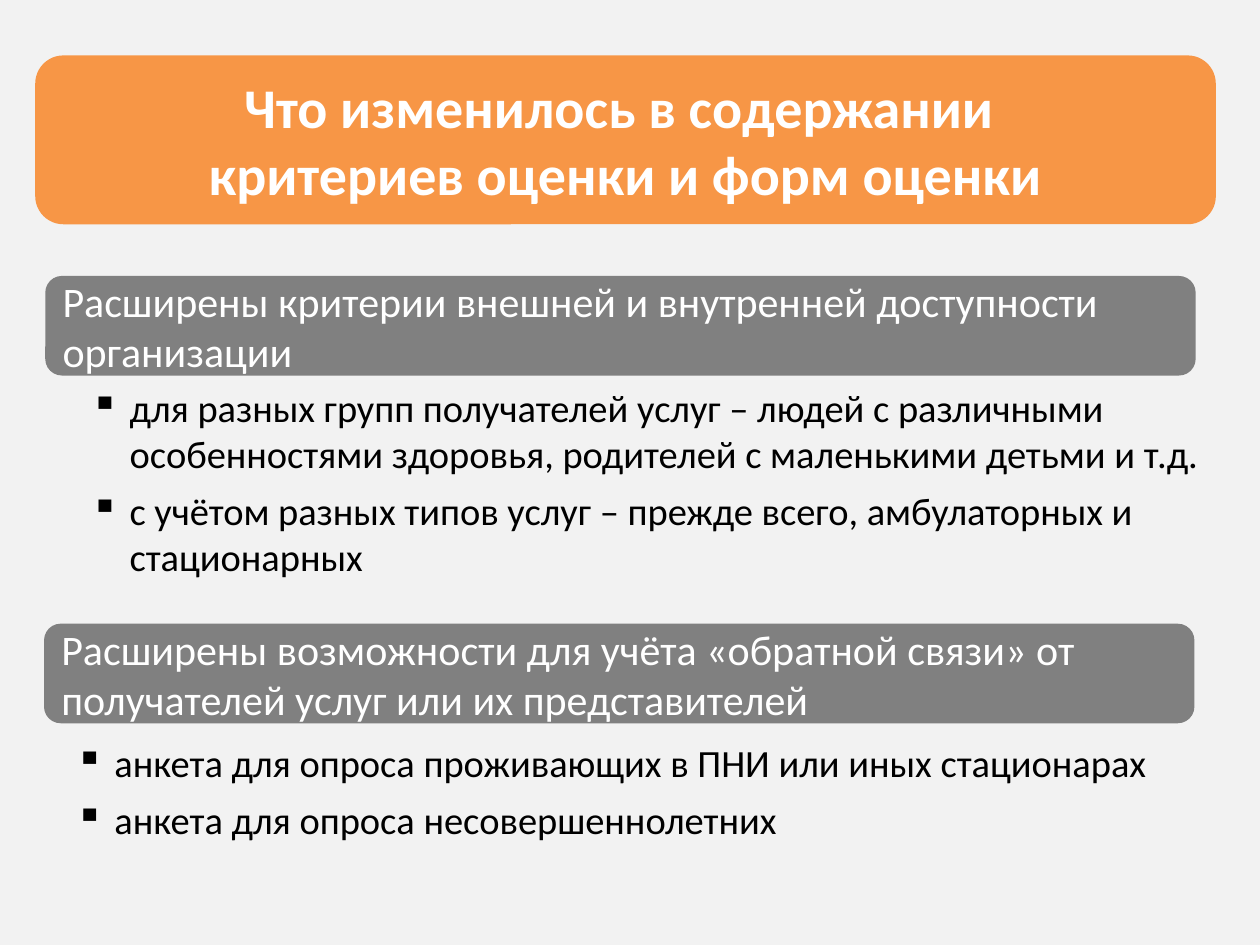
from pptx import Presentation
from pptx.dml.color import RGBColor
from pptx.enum.shapes import MSO_SHAPE
from pptx.enum.text import MSO_ANCHOR, MSO_AUTO_SIZE, PP_ALIGN
from pptx.oxml.ns import qn
from pptx.util import Inches, Pt
from lxml.etree import SubElement

PAPER = RGBColor(0xF2, 0xF2, 0xF2)
ORANGE = RGBColor(0xF7, 0x96, 0x46)
GRAY = RGBColor(0x80, 0x80, 0x80)
WHITE = RGBColor(0xFF, 0xFF, 0xFF)
BLACK = RGBColor(0, 0, 0)
WIDTH, HEIGHT = 10, 7.5
COLS, ROWS = 100, 75


class Deck:
    """Holds the style and the current slide; lengths are grid columns and rows."""

    def __init__(self, face="Calibri"):
        self.face = face
        self.show = Presentation()
        self.show.slide_width = Inches(WIDTH)
        self.show.slide_height = Inches(HEIGHT)
        self.slide = self.show.slides.add_slide(self.show.slide_layouts[6])
        fill = self.slide.background.fill
        fill.solid()
        fill.fore_color.rgb = PAPER

    def area(self, col, row, wide, high):
        x, y = WIDTH / COLS, HEIGHT / ROWS
        return Inches(col * x), Inches(row * y), Inches(wide * x), Inches(high * y)

    def style(self, para, size, color, bold=False):
        font = para.font
        font.name, font.size, font.bold = self.face, Pt(size), bold
        font.color.rgb = color

    def banner(self, area, text, fill, size, align=PP_ALIGN.LEFT, bold=False):
        shape = self.slide.shapes.add_shape(MSO_SHAPE.ROUNDED_RECTANGLE, *self.area(*area))
        shape.shadow.inherit = False
        shape.fill.solid()
        shape.fill.fore_color.rgb = fill
        shape.line.fill.background()
        frame = shape.text_frame
        frame.word_wrap = True
        frame.vertical_anchor = MSO_ANCHOR.MIDDLE
        para = frame.paragraphs[0]
        para.text = text
        para.alignment = align
        self.style(para, size, WHITE, bold)

    def bullets(self, area, items):
        frame = self.slide.shapes.add_textbox(*self.area(*area)).text_frame
        frame.word_wrap = True
        frame.auto_size = MSO_AUTO_SIZE.SHAPE_TO_FIT_TEXT
        for i, text in enumerate(items):
            para = frame.add_paragraph() if i else frame.paragraphs[0]
            para.text = text
            para.level = 1
            para.space_before = Pt(6)
            props = para._p.get_or_add_pPr()
            props.set("marL", str(Inches(0.81)))
            props.set("indent", str(Inches(-0.31)))
            SubElement(props, qn("a:buChar")).set("char", "▪")
            self.style(para, 22, BLACK)


def main():
    deck = Deck()
    deck.banner((2.8, 4.4, 93.7, 13.4),
                "Что изменилось в содержании \vкритериев оценки и форм оценки",
                ORANGE, 32, PP_ALIGN.CENTER, True)
    deck.banner((3.6, 21.9, 91.3, 7.9),
                "Расширены критерии внешней и внутренней доступности организации",
                GRAY, 24)
    deck.bullets((1.2, 30, 96.1, 16.7), (
        "для разных групп получателей услуг – людей с различными особенностями "
        "здоровья, родителей с маленькими детьми и т.д.",
        "с учётом разных типов услуг – прежде всего, амбулаторных и стационарных",
    ))
    deck.banner((3.5, 49.5, 91.3, 7.9),
                "Расширены возможности для учёта «обратной связи» от получателей "
                "услуг или их представителей",
                GRAY, 24)
    deck.bullets((0, 58.2, 97.2, 9.3), (
        "анкета для опроса проживающих в ПНИ или иных стационарах",
        "анкета для опроса несовершеннолетних",
    ))
    deck.show.save("out.pptx")


if __name__ == "__main__":
    main()
